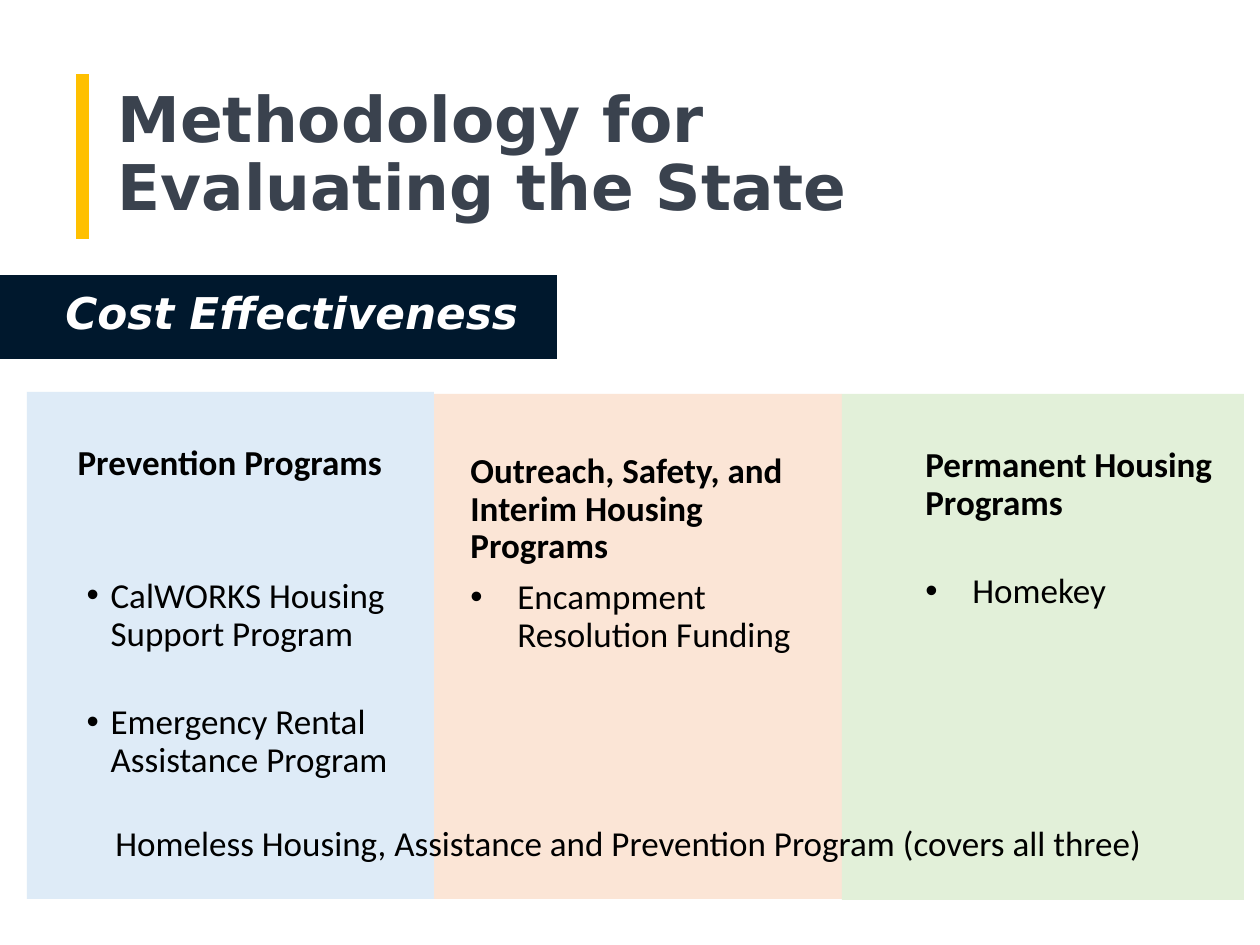
from lxml.etree import SubElement
from pptx import Presentation
from pptx.dml.color import RGBColor
from pptx.enum.shapes import MSO_SHAPE as Shape
from pptx.enum.text import MSO_ANCHOR as Anchor, MSO_AUTO_SIZE as AutoSize, PP_ALIGN as Align
from pptx.oxml.ns import qn
from pptx.util import Emu, Pt

PX = 914400 / 126
BLACK = RGBColor(0x00, 0x00, 0x00)
WHITE = RGBColor(0xFF, 0xFF, 0xFF)
SLATE = RGBColor(0x3A, 0x42, 0x4E)
NAVY = RGBColor(0x00, 0x18, 0x2D)
GOLD = RGBColor(0xFF, 0xC0, 0x00)
BLUE = RGBColor(0xDE, 0xEB, 0xF7)
PEACH = RGBColor(0xFB, 0xE5, 0xD6)
GREEN = RGBColor(0xE2, 0xF0, 0xD9)
BODY_FONT = "Calibri"
HEAD_FONT = "DejaVu Sans"


def px(length):
    """Turn pixels into EMU."""
    return Emu(round(length * PX))


def place(shape, left, top, width, height):
    """Move and size a shape given in pixels."""
    shape.left, shape.top = px(left), px(top)
    shape.width, shape.height = px(width), px(height)


def add_block(page, bounds, fill, line=None):
    """Add a filled rectangle without a shadow."""
    block = page.shapes.add_shape(Shape.RECTANGLE, *map(px, bounds))
    block.shadow.inherit = False
    block.fill.solid()
    block.fill.fore_color.rgb = fill
    if line is None:
        block.line.fill.background()
    else:
        block.line.color.rgb = line
        block.line.width = Pt(1.5)
    return block


def set_frame(frame, anchor=Anchor.TOP, margin_top=6):
    """Make a text frame wrap at a fixed size."""
    frame.word_wrap = True
    frame.auto_size = AutoSize.NONE
    frame.vertical_anchor = anchor
    frame.margin_top = px(margin_top)


def add_span(para, text, size=20, font=BODY_FONT, color=BLACK, bold=False, italic=False):
    """Add one formatted run to a paragraph."""
    span = para.add_run()
    span.text = text
    span.font.size = Pt(size)
    span.font.name = font
    span.font.color.rgb = color
    span.font.bold = bold
    span.font.italic = italic


def set_para(para, indent=0, hanging=0, before=0, spacing=0.9):
    """Set spacing and indents, with a bullet when the indent hangs."""
    para.alignment = Align.LEFT
    para.line_spacing = spacing
    para.space_before = Pt(before)
    props = para._p.get_or_add_pPr()
    props.set("marL", str(px(indent)))
    props.set("indent", str(-px(hanging)))
    if hanging:
        SubElement(props, qn("a:buFont"), typeface="Arial")
        SubElement(props, qn("a:buChar"), char="•")
    else:
        SubElement(props, qn("a:buNone"))


def fill_column(column, margin_top, heading, heading_indent, items, indent, hanging, gaps):
    """Write a bold heading and its bulleted programs into a column."""
    frame = column.text_frame
    set_frame(frame, margin_top=margin_top)
    para = frame.paragraphs[0]
    set_para(para, heading_indent)
    add_span(para, heading, bold=True)
    for item, gap in zip(items, gaps):
        para = frame.add_paragraph()
        set_para(para, indent, hanging, gap)
        add_span(para, item)


def add_label(page, bounds, text, margin_top=6, **style):
    """Add a one-line text box."""
    box = page.shapes.add_textbox(*map(px, bounds))
    set_frame(box.text_frame, margin_top=margin_top)
    para = box.text_frame.paragraphs[0]
    set_para(para, spacing=1.0)
    add_span(para, text, **style)


def set_title(title, text):
    """Place and format the slide title."""
    place(title, 105, 58, 777, 197)
    set_frame(title.text_frame, Anchor.MIDDLE)
    para = title.text_frame.paragraphs[0]
    set_para(para)
    add_span(para, text, 36, HEAD_FONT, SLATE, bold=True)


def main():
    """Build the slide and save the deck."""
    deck = Presentation()
    deck.slide_width, deck.slide_height = px(1260), px(945)
    page = deck.slides.add_slide(deck.slide_layouts[1])

    set_title(page.shapes.title, "Methodology for Evaluating the State")
    add_block(page, (0, 275, 557, 84), NAVY)
    add_label(page, (53, 276, 543, 105), "Cost Effectiveness", margin_top=10,
              size=25, font=HEAD_FONT, color=WHITE, bold=True, italic=True)
    add_block(page, (75, 73, 15, 167), GOLD, WHITE)

    prevention = page.placeholders[1]
    place(prevention, 27, 392, 407, 507)
    prevention.fill.solid()
    prevention.fill.fore_color.rgb = BLUE
    fill_column(prevention, 53, "Prevention Programs", 38,
                ["CalWORKS Housing Support Program", "Emergency Rental Assistance Program"],
                71, 24, [54.5, 29])

    outreach = add_block(page, (434, 394, 408, 505), PEACH)
    fill_column(outreach, 59, "Outreach, Safety, and Interim Housing Programs", 24,
                ["Encampment Resolution Funding"], 71, 47, [7.5])

    permanent = add_block(page, (842, 394, 402, 506), GREEN)
    fill_column(permanent, 53, "Permanent Housing Programs", 71, ["Homekey"], 118, 47, [29])

    add_label(page, (103, 815, 1106, 55),
              "Homeless Housing, Assistance and Prevention Program (covers all three)")
    deck.save("out.pptx")


if __name__ == "__main__":
    main()
